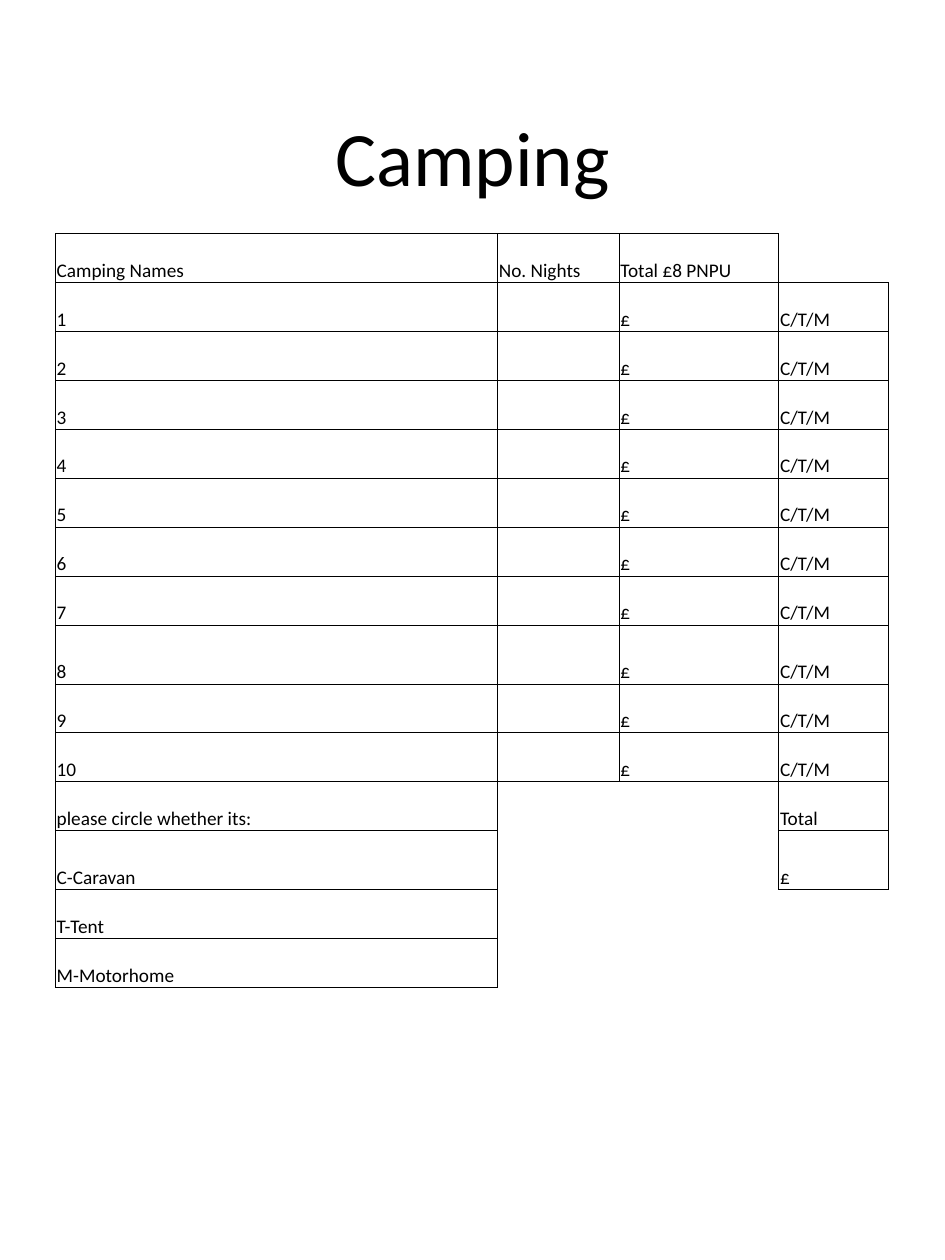
from lxml import etree
from pptx import Presentation
from pptx import util as u
from pptx.dml.color import RGBColor
from pptx.enum import text
from pptx.oxml import ns

BLACK = "000000"
FONT = "Calibri"
COLUMN_WIDTHS = [252.7, 69.5, 91.2, 62.8]
ROW_HEIGHT, TALL_ROW_HEIGHT = 28, 33.6
TALL_ROWS = {8, 12}
OPEN_CELLS = {(0, 3), (13, 3), (14, 3)} | {
    (row, column) for row in range(11, 15) for column in (1, 2)
}
SIDES = {"lnL": (0, -1), "lnR": (0, 1), "lnT": (-1, 0), "lnB": (1, 0)}


def colour(value):
    """Turn a hex string into a colour."""
    return RGBColor.from_string(value)


def write(frame, words, size=11, font=FONT, fill=BLACK, align=text.PP_ALIGN.LEFT):
    """Write one formatted paragraph into a text frame."""
    para = frame.paragraphs[0]
    para.alignment = align
    if words:
        span = para.add_run()
        span.text = words
        span.font.size = u.Pt(size)
        span.font.name = font
        span.font.color.rgb = colour(fill)


def add_title(page, words):
    """Place and format the title placeholder."""
    box = page.shapes.title
    box.left, box.top, box.width, box.height = map(u.Pt, (27, 29, 486, 120))
    box.text_frame.vertical_anchor = text.MSO_ANCHOR.MIDDLE
    write(box.text_frame, words, size=44, align=text.PP_ALIGN.CENTER)


def form_rows():
    """List the wording of the booking form, row by row."""
    entries = [[str(number), "", "£", "C/T/M"] for number in range(1, 11)]
    return [
        ["Camping Names", "No. Nights", "Total £8 PNPU", ""],
        *entries,
        ["please circle whether its:", "", "", "Total"],
        ["C-Caravan", "", "", "£"],
        ["T-Tent", "", "", ""],
        ["M-Motorhome", "", "", ""],
    ]


def add_border(cell, side, visible):
    """Draw or hide one side of a cell."""
    properties = cell._tc.get_or_add_tcPr()
    line = etree.SubElement(properties, ns.qn("a:" + side), w=str(u.Pt(0.5)))
    if visible:
        fill = etree.SubElement(line, ns.qn("a:solidFill"))
        etree.SubElement(fill, ns.qn("a:srgbClr"), val=BLACK)
    else:
        etree.SubElement(line, ns.qn("a:noFill"))


def add_form(page, rows):
    """Add the booking table, with borders around every cell that is not open."""
    heights = [
        TALL_ROW_HEIGHT if row in TALL_ROWS else ROW_HEIGHT for row in range(len(rows))
    ]
    table = page.shapes.add_table(
        len(rows), len(COLUMN_WIDTHS), u.Pt(31.7), u.Pt(133.4),
        u.Pt(sum(COLUMN_WIDTHS)), u.Pt(sum(heights)),
    ).table
    table.first_row = table.horz_banding = False
    for column, width in zip(table.columns, COLUMN_WIDTHS):
        column.width = u.Pt(width)
    for row, height in zip(table.rows, heights):
        row.height = u.Pt(height)
    boxed = {
        (row, column)
        for row in range(len(rows))
        for column in range(len(COLUMN_WIDTHS))
    } - OPEN_CELLS
    for row, entries in enumerate(rows):
        for column, words in enumerate(entries):
            cell = table.cell(row, column)
            cell.margin_left = cell.margin_right = cell.margin_top = u.Pt(0.7)
            cell.margin_bottom = u.Pt(0)
            cell.vertical_anchor = text.MSO_ANCHOR.BOTTOM
            for side, (down, across) in SIDES.items():
                neighbours = {(row, column), (row + down, column + across)}
                add_border(cell, side, bool(neighbours & boxed))
            cell.fill.background()
            write(cell.text_frame, words)


def main():
    """Build the camping form and save it."""
    deck = Presentation()
    deck.slide_width, deck.slide_height = u.Pt(540), u.Pt(720)
    page = deck.slides.add_slide(deck.slide_layouts.get_by_name("Title Only"))
    add_title(page, "Camping")
    add_form(page, form_rows())
    deck.save("out.pptx")


if __name__ == "__main__":
    main()
